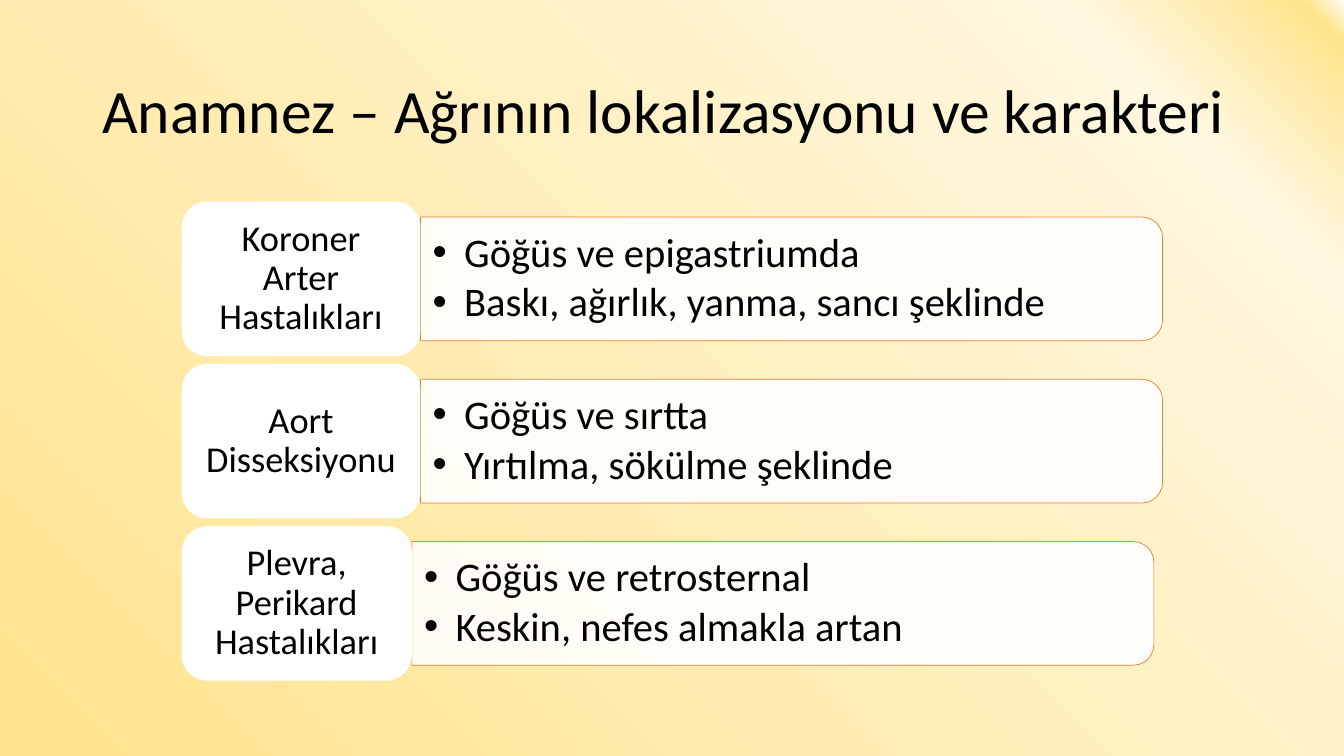
from lxml import etree
from pptx import Presentation
from pptx.dml.color import RGBColor
from pptx.enum import shapes as sh, text as tx
from pptx.oxml import ns
from pptx.util import Pt


def paint(color_format, hex_color, alpha=None):
    color_format.rgb = RGBColor.from_string(hex_color)
    if alpha:
        color = color_format._xFill.find(ns.qn("a:srgbClr"))
        etree.SubElement(color, ns.qn("a:alpha"), val=str(alpha * 1000))


def write(frame, lines, size, insets, align, bulleted=False):
    frame.word_wrap = True
    frame.vertical_anchor = tx.MSO_ANCHOR.MIDDLE
    frame.margin_left = frame.margin_right = Pt(insets[0])
    frame.margin_top = frame.margin_bottom = Pt(insets[1])
    for number, line in enumerate(lines):
        paragraph = frame.add_paragraph() if number else frame.paragraphs[0]
        paragraph.alignment = align
        paragraph.line_spacing = 0.9
        if bulleted:
            paragraph.space_after = Pt(size * 0.15)
            props = paragraph._p.get_or_add_pPr()
            props.set("marL", str(Pt(22.5)))
            props.set("indent", str(Pt(-22.5)))
            etree.SubElement(props, ns.qn("a:buFont"), typeface="Arial")
            etree.SubElement(props, ns.qn("a:buChar"), char="•")
        run = paragraph.add_run()
        run.text = line
        run.font.name = "Calibri"
        run.font.size = Pt(size)
        paint(run.font.color, "000000")


deck = Presentation()
deck.slide_width, deck.slide_height = Pt(960), Pt(540)
slide = deck.slides.add_slide(deck.slide_layouts[6])

backdrop = slide.background.fill
backdrop.gradient()
backdrop.gradient_angle = 225
stops = next(slide.element.iter(ns.qn("a:gsLst")))
for stop in list(stops):
    stops.remove(stop)
for position, tint in [(0, "FFFCF2"), (2, "FFE38C"), (13, "FFF7DF"), (100, "FFE38C")]:
    stop = etree.SubElement(stops, ns.qn("a:gs"), pos=str(position * 1000))
    etree.SubElement(stop, ns.qn("a:srgbClr"), val=tint)

title = slide.shapes.add_textbox(Pt(66), Pt(28.75), Pt(828), Pt(104.4))
write(title.text_frame, ["Anamnez – Ağrının lokalizasyonu ve karakteri"], 44,
      (7.2, 3.6), tx.PP_ALIGN.LEFT)

diseases = [
    ("Koroner Arter Hastalıkları", 170.6,
     ["Göğüs ve epigastriumda", "Baskı, ağırlık, yanma, sancı şeklinde"]),
    ("Aort Disseksiyonu", 170.6,
     ["Göğüs ve sırtta", "Yırtılma, sökülme şeklinde"]),
    ("Plevra, Perikard Hastalıkları", 164.4,
     ["Göğüs ve retrosternal", "Keskin, nefes almakla artan"]),
]
LEFT, TOP, PITCH, LABEL_H = 129.8, 144, 115.9, 110.4
PANEL_W, PANEL_H, FINDINGS_W, FINDINGS_H = 530, 88.3, 525.6, 80

for row, (disease, label_w, findings) in enumerate(diseases):
    top = TOP + row * PITCH
    middle = top + LABEL_H / 2
    panel_left = LEFT + label_w

    panel = slide.shapes.add_shape(
        sh.MSO_SHAPE.ROUND_2_SAME_RECTANGLE,
        Pt(panel_left + (PANEL_W - PANEL_H) / 2), Pt(middle - PANEL_W / 2),
        Pt(PANEL_H), Pt(PANEL_W))
    panel.rotation = 90
    panel.shadow.inherit = False
    panel.fill.solid()
    paint(panel.fill.fore_color, "FFFFFF", 90)
    panel.line.width = Pt(0.5)
    paint(panel.line.color, "ED7D31")

    symptoms = slide.shapes.add_textbox(
        Pt(panel_left), Pt(middle - FINDINGS_H / 2), Pt(FINDINGS_W), Pt(FINDINGS_H))
    write(symptoms.text_frame, findings, 29, (8.7, 4.35), tx.PP_ALIGN.LEFT, True)

    label = slide.shapes.add_shape(
        sh.MSO_SHAPE.ROUNDED_RECTANGLE, Pt(LEFT), Pt(top), Pt(label_w), Pt(LABEL_H))
    label.shadow.inherit = False
    label.fill.solid()
    paint(label.fill.fore_color, "FFFFFF")
    label.line.fill.background()
    write(label.text_frame, [disease], 26, (7.8, 3.9), tx.PP_ALIGN.CENTER)

deck.save("out.pptx")
